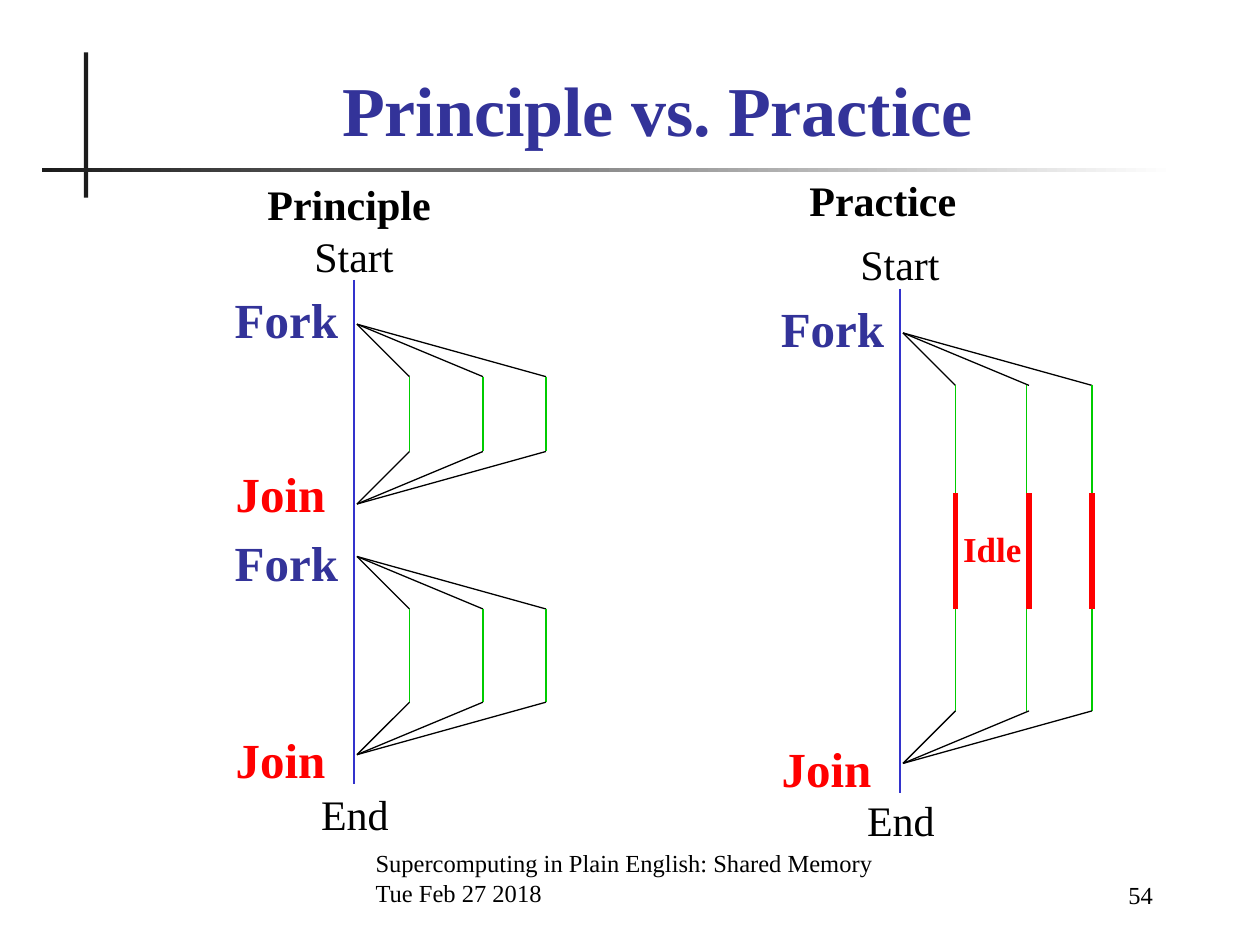
from pptx import Presentation
from pptx.dml.color import RGBColor
from pptx.enum.shapes import MSO_CONNECTOR, MSO_SHAPE
from pptx.enum.text import MSO_ANCHOR, MSO_AUTO_SIZE, PP_ALIGN
from pptx.oxml.ns import qn
from pptx.util import Pt
from lxml import etree

LEFT, MID, RIGHT = PP_ALIGN.LEFT, PP_ALIGN.CENTER, PP_ALIGN.RIGHT
TOP, BASE = MSO_ANCHOR.TOP, MSO_ANCHOR.BOTTOM
GROW, FIXED = MSO_AUTO_SIZE.SHAPE_TO_FIT_TEXT, MSO_AUTO_SIZE.NONE
RECT, STRAIGHT = MSO_SHAPE.RECTANGLE, MSO_CONNECTOR.STRAIGHT

FONT = "Times New Roman"
HEX = {
    "black": "000000",
    "rule": "1C1C1C",
    "white": "FFFFFF",
    "navy": "333399",
    "stem": "3333CC",
    "lane": "00CC00",
    "red": "FF0000",
}
LANES = (30, 72, 108)  # offsets of the threads from the hub
DROP = 30              # height of a fork or join fan


def color(name):
    return RGBColor.from_string(HEX[name])


def write(frame, lines, size, tint, bold, align):
    for i, line in enumerate(lines):
        para = frame.paragraphs[0] if i == 0 else frame.add_paragraph()
        para.alignment = align
        run = para.add_run()
        run.text = line
        font = run.font
        font.name, font.size, font.bold = FONT, Pt(size), bold
        font.color.rgb = color(tint)


def add_text(slide, box, lines, size, tint="black", bold=False,
             align=MID, anchor=TOP, wrap=False):
    shape = slide.shapes.add_textbox(*map(Pt, box))
    frame = shape.text_frame
    frame.word_wrap = wrap
    frame.auto_size = FIXED if wrap else GROW
    frame.vertical_anchor = anchor
    write(frame, lines, size, tint, bold, align)


def add_line(slide, x1, y1, x2, y2, tint="black", width=0.75):
    line = slide.shapes.add_connector(STRAIGHT, *map(Pt, (x1, y1, x2, y2)))
    line.line.color.rgb = color(tint)
    line.line.width = Pt(width)
    etree.SubElement(line._element.spPr, qn("a:effectLst"))


def add_bar(slide, box, fade=False):
    bar = slide.shapes.add_shape(RECT, *map(Pt, box))
    bar.shadow.inherit = False
    bar.line.fill.background()
    if fade:
        bar.fill.gradient()
        bar.fill.gradient_angle = 0
        for stop, (spot, tint) in zip(bar.fill.gradient_stops,
                                      ((0, "rule"), (1, "white"))):
            stop.position = spot
            stop.color.rgb = color(tint)
    else:
        bar.fill.solid()
        bar.fill.fore_color.rgb = color("rule")


def add_title(slide, text):
    title = slide.shapes.title
    title.left, title.top, title.width, title.height = map(
        Pt, (60, 36.5, 631.5, 53))
    frame = title.text_frame
    frame.auto_size = FIXED
    frame.vertical_anchor = BASE
    write(frame, [text], 40, "navy", True, MID)


def add_team(slide, hub, fork, join, tops, shifts=(0, 0, 0)):
    """Fork into threads and join them; tops are those of the two labels."""
    for gap, shift in zip(LANES, shifts):
        x = hub + gap
        add_line(slide, hub, fork, x, fork + DROP)
        add_line(slide, x + shift, fork + DROP, x + shift, join - DROP, "lane")
        add_line(slide, hub, join, x, join - DROP)
    for text, tint, top, edge, width in (
            ("Fork", "navy", tops[0], hub - 3.75, 76),
            ("Join", "red", tops[1], hub - 11, 68)):
        add_text(slide, (edge - width, top, width, 41), [text], 28,
                 tint, True, RIGHT)


def add_stem(slide, hub, top, start, end):
    """Main thread with the tops of its two end labels."""
    x = hub - 1.75
    add_line(slide, x, top, x, top + 288, "stem")
    add_text(slide, (x - 30, start, 60, 36), ["Start"], 24)
    add_text(slide, (x - 26.5, end, 54, 36), ["End"], 24)


def add_idle(slide, hub):
    for gap in LANES:
        add_line(slide, hub + gap, 282, hub + gap, 348, "red", 3)
    add_text(slide, (hub + 26, 298, 50, 31), ["Idle"], 20, "red", True)


def main():
    prs = Presentation()
    prs.slide_width, prs.slide_height = Pt(720), Pt(540)
    slide = prs.slides.add_slide(prs.slide_layouts[5])

    add_bar(slide, (48, 30, 2.4, 83))
    add_bar(slide, (24, 96, 648, 2.4), fade=True)
    add_title(slide, "Principle vs. Practice")

    ideal, real = 204, 516
    add_text(slide, (144, 98.5, 111, 36), ["Principle"], 24, bold=True)
    add_stem(slide, ideal, 160, 128, 447)
    for fork, join, tops in ((185.25, 288, (162, 261.5)),
                             (318, 431.25, (300.5, 413.5))):
        add_team(slide, ideal, fork, join, tops)

    add_text(slide, (454, 96, 101, 36), ["Practice"], 24, bold=True)
    add_stem(slide, real, 165, 133, 450.5)
    add_team(slide, real, 190.25, 436.25, (167, 418.5), (0, -1.5, 0))
    add_idle(slide, real)

    add_text(slide, (207.5, 486, 314.5, 36),
             ["Supercomputing in Plain English: Shared Memory",
              "Tue Feb 27 2018"], 14, align=LEFT, anchor=BASE, wrap=True)
    add_text(slide, (564, 487.5, 102, 36), ["54"], 14,
             align=RIGHT, anchor=BASE, wrap=True)
    prs.save("out.pptx")


if __name__ == "__main__":
    main()
